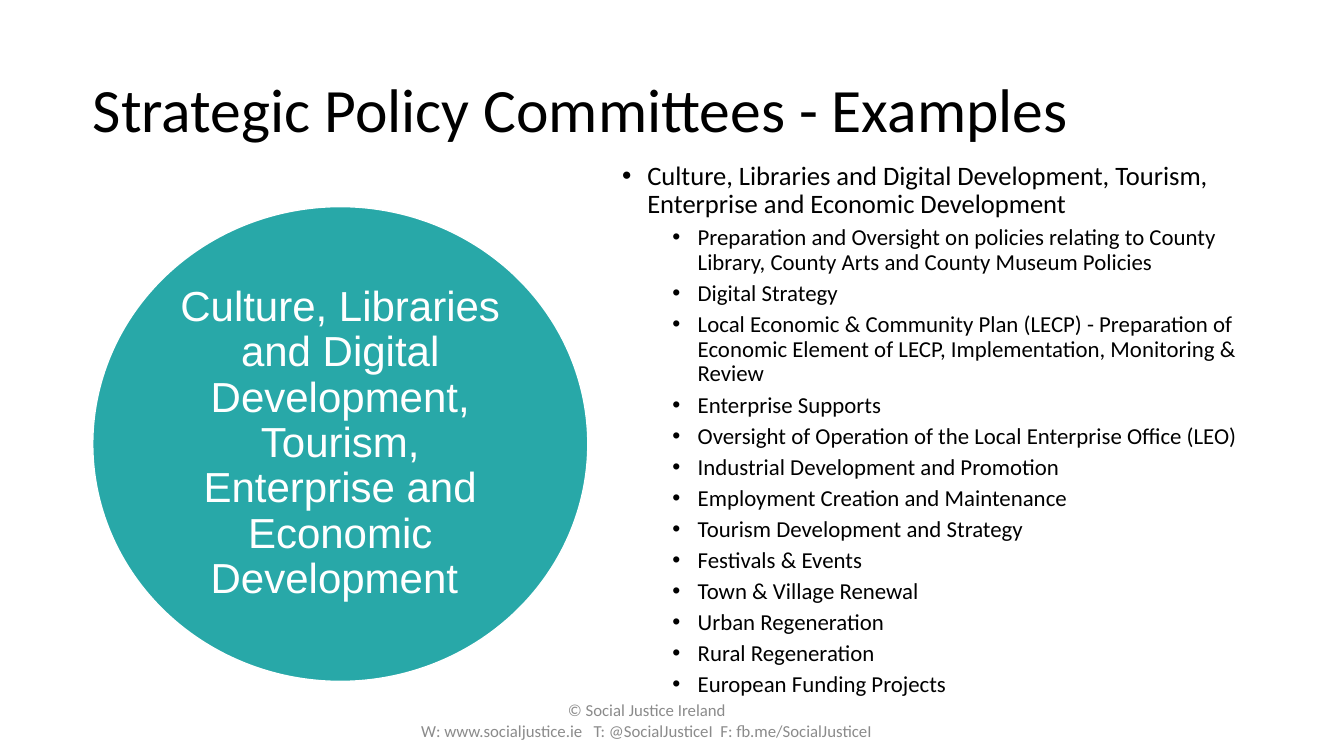
from lxml import etree
from pptx import Presentation
from pptx import util as u
from pptx.dml.color import RGBColor
from pptx.enum import shapes, text
from pptx.oxml.ns import qn

BLACK = RGBColor(0x00, 0x00, 0x00)
WHITE = RGBColor(0xFF, 0xFF, 0xFF)
TEAL = RGBColor(0x28, 0xA8, 0xA8)
GREY = RGBColor(0x8B, 0x8B, 0x8B)

COMMITTEE = ("Culture, Libraries and Digital Development, Tourism, "
             "Enterprise and Economic Development")
DUTIES = [
    "Preparation and Oversight on policies relating to County Library, "
    "County Arts and County Museum Policies",
    "Digital Strategy",
    "Local Economic & Community Plan (LECP) - Preparation of Economic Element "
    "of LECP, Implementation, Monitoring & Review",
    "Enterprise Supports",
    "Oversight of Operation of the Local Enterprise Office (LEO)",
    "Industrial Development and Promotion",
    "Employment Creation and Maintenance",
    "Tourism Development and Strategy",
    "Festivals & Events",
    "Town & Village Renewal",
    "Urban Regeneration",
    "Rural Regeneration",
    "European Funding Projects",
]
CONTACT = [
    "© Social Justice Ireland",
    "W: www.socialjustice.ie   T: @SocialJusticeI  F: fb.me/SocialJusticeI",
]


class CommitteeSlide:
    """Holds the text style and the slide being built."""

    font_name = "Calibri"

    def __init__(self, deck):
        self.slide = deck.slides.add_slide(deck.slide_layouts[6])

    def box(self, place, anchor=text.MSO_ANCHOR.MIDDLE, inset=(0, 0)):
        frame = self.slide.shapes.add_textbox(*map(u.Inches, place)).text_frame
        across, down = map(u.Inches, inset)
        settings = {"word_wrap": True, "vertical_anchor": anchor,
                    "margin_left": across, "margin_right": across,
                    "margin_top": down, "margin_bottom": down}
        for name, value in settings.items():
            setattr(frame, name, value)
        return frame

    def paragraph(self, frame, words, size, color=BLACK, font=None, indent=None,
                  **layout):
        first = frame.paragraphs[0]
        line = frame.add_paragraph() if first.runs else first
        for name, value in layout.items():
            setattr(line, name, value)
        if indent is not None:
            self.bullet(line, indent)
        run = line.add_run()
        run.text = words
        run.font.color.rgb = color
        for name, value in {"name": font or self.font_name, "size": u.Pt(size)}.items():
            setattr(run.font, name, value)

    def bullet(self, line, indent):
        props = line._p.get_or_add_pPr()
        props.set("marL", str(u.Inches(indent)))
        props.set("indent", str(u.Inches(-0.25)))
        etree.SubElement(props, qn("a:buFont")).set("typeface", "Arial")
        etree.SubElement(props, qn("a:buChar")).set("char", "•")

    def ellipse(self, place, fill, outline):
        disc = self.slide.shapes.add_shape(
            shapes.MSO_SHAPE.OVAL, *map(u.Inches, place))
        disc.shadow.inherit = False
        disc.fill.solid()
        disc.fill.fore_color.rgb = fill
        disc.line.color.rgb = outline
        disc.line.width = u.Pt(1)


def main():
    deck = Presentation()
    deck.slide_width, deck.slide_height = u.Inches(13.33), u.Inches(7.5)
    page = CommitteeSlide(deck)
    center = text.PP_ALIGN.CENTER

    # Title
    title = page.box((0.92, 0.4, 11.49, 1.44))
    page.paragraph(title, "Strategic Policy Committees - Examples", 44,
                   line_spacing=0.9)

    # Committee disc and its label
    page.ellipse((0.92, 2.05, 4.91, 4.71), TEAL, WHITE)
    label = page.box((1.64, 2.74, 3.47, 3.33), inset=(0.04, 0.04))
    page.paragraph(label, COMMITTEE + " ", 30, WHITE, "Arial",
                   alignment=center, line_spacing=0.9)

    # Committee duties
    duties = page.box((6.17, 1.61, 6.24, 5.14), text.MSO_ANCHOR.TOP)
    page.paragraph(duties, COMMITTEE, 19, indent=0.25, line_spacing=0.9)
    for duty in DUTIES:
        page.paragraph(duties, duty, 16.3, indent=0.75, level=1,
                       line_spacing=0.9, space_before=u.Pt(4.6))

    # Footer
    footer = page.box((3.92, 6.95, 4.99, 0.39), inset=(0.1, 0.05))
    for contact in CONTACT:
        page.paragraph(footer, contact, 12, GREY, alignment=center)

    deck.save("out.pptx")


if __name__ == "__main__":
    main()
